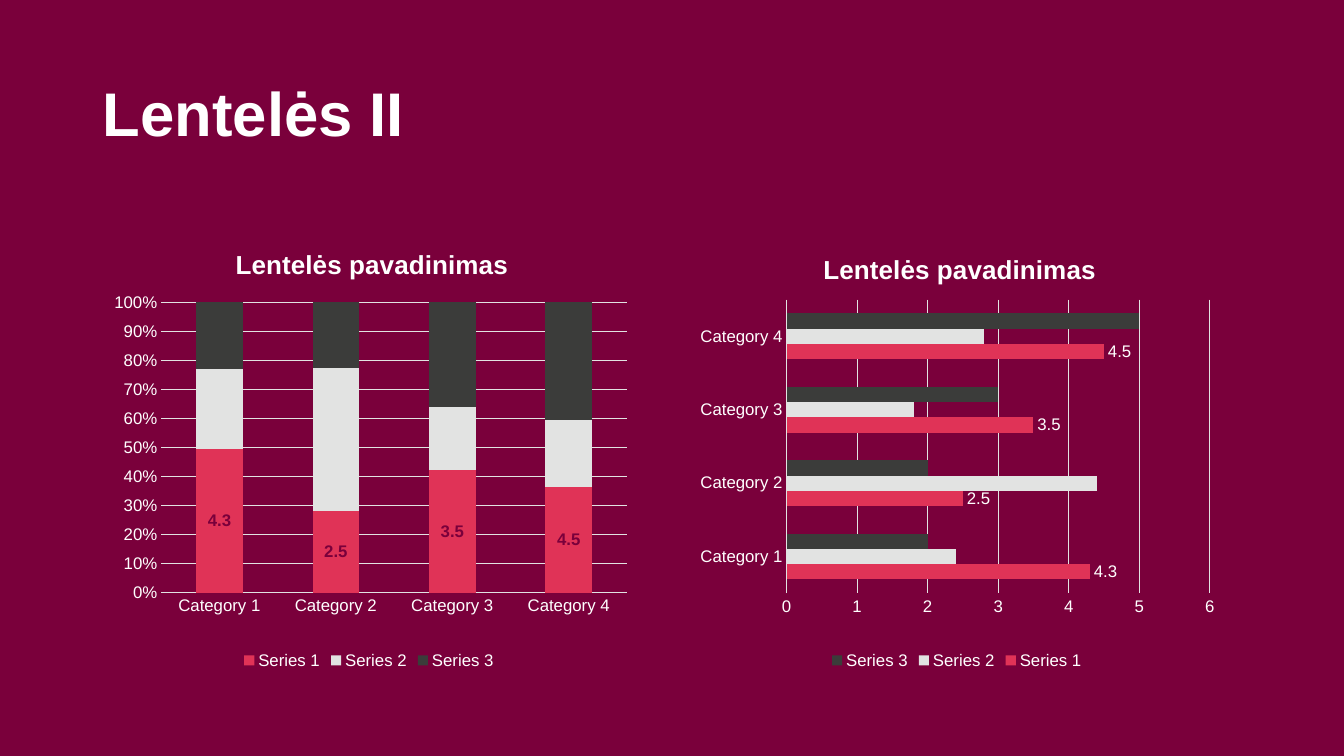
from lxml.etree import SubElement
from pptx import Presentation
from pptx.chart.data import CategoryChartData
from pptx.dml.color import RGBColor
from pptx.enum.chart import (XL_CHART_TYPE as ChartType, XL_LABEL_POSITION as LabelPos,
                             XL_LEGEND_POSITION as LegendPos, XL_TICK_MARK as TickMark)
from pptx.enum.text import MSO_ANCHOR, PP_ALIGN
from pptx.oxml.ns import qn
from pptx.util import Inches, Pt

BURGUNDY = RGBColor(0x7A, 0x00, 0x3B)
WHITE = RGBColor(0xFF, 0xFF, 0xFF)
RED = RGBColor(0xE0, 0x33, 0x57)
LIGHT = RGBColor(0xE2, 0xE3, 0xE2)
DARK = RGBColor(0x3B, 0x3C, 0x3A)
FONT = "Arial"

# Grid: two equal columns below the heading
LEFT, COLUMN_STEP, COLUMN_WIDTH = 0.92, 5.83, 5.48
HEADING_TOP, HEADING_WIDTH, HEADING_HEIGHT = 0.78, 9.77, 1.45
CHART_TOP, CHART_HEIGHT = HEADING_TOP + HEADING_HEIGHT, 4.45

CATEGORIES = [f"Category {n}" for n in range(1, 5)]
SERIES = [
    ("Series 1", (4.3, 2.5, 3.5, 4.5), RED),
    ("Series 2", (2.4, 4.4, 1.8, 2.8), LIGHT),
    ("Series 3", (2, 2, 3, 5), DARK),
]


def style_font(font, size, color=WHITE, bold=False):
    font.name, font.size, font.bold = FONT, Pt(size), bold
    font.color.rgb = color


def style_line(line):
    line.color.rgb = LIGHT
    line.width = Pt(0.75)


def set_layout(parent, index, **settings):
    """Give a chart part a fixed place, in shares of the chart's size."""
    for old in parent.findall(qn("c:layout")):
        parent.remove(old)
    layout = SubElement(parent, qn("c:layout"))
    parent.insert(index, layout)
    manual = SubElement(layout, qn("c:manualLayout"))
    for tag, value in settings.items():
        SubElement(manual, qn(f"c:{tag}")).set("val", str(value))


def add_heading(slide, text):
    heading = slide.shapes.title
    heading.left, heading.top = Inches(LEFT), Inches(HEADING_TOP)
    heading.width, heading.height = Inches(HEADING_WIDTH), Inches(HEADING_HEIGHT)
    frame = heading.text_frame
    frame.vertical_anchor = MSO_ANCHOR.TOP
    paragraph = frame.paragraphs[0]
    paragraph.alignment = PP_ALIGN.LEFT
    paragraph.line_spacing = 0.9
    run = paragraph.add_run()
    run.text = text
    style_font(run.font, 44, bold=True)


def style_axes(chart, top, step, number_format):
    for axis in (chart.category_axis, chart.value_axis):
        axis.major_tick_mark = axis.minor_tick_mark = TickMark.NONE
        style_font(axis.tick_labels.font, 12)
    style_line(chart.category_axis.format.line)
    values = chart.value_axis
    values.format.line.fill.background()
    values.has_major_gridlines = True
    style_line(values.major_gridlines.format.line)
    values.minimum_scale, values.maximum_scale, values.major_unit = 0, top, step
    values.tick_labels.number_format = number_format
    values.tick_labels.number_format_is_linked = False


def add_chart(slide, column, kind, caption, caption_top, plot_area, gap):
    data = CategoryChartData()
    data.categories = CATEGORIES
    for name, values, _ in SERIES:
        data.add_series(name, values)
    chart = slide.shapes.add_chart(
        kind, Inches(LEFT + column * COLUMN_STEP), Inches(CHART_TOP),
        Inches(COLUMN_WIDTH), Inches(CHART_HEIGHT), data).chart
    style_font(chart.font, 10)

    # Caption
    run = chart.chart_title.text_frame.paragraphs[0].add_run()
    run.text = caption
    style_font(run.font, 18.6, bold=True)
    chart.chart_title.include_in_layout = False
    set_layout(chart.element.find(".//" + qn("c:title")), 1,
               xMode="edge", yMode="edge", x=0.25, y=caption_top)

    # Legend
    chart.has_legend = True
    chart.legend.position = LegendPos.BOTTOM
    chart.legend.include_in_layout = False
    style_font(chart.legend.font, 12)

    # Bars
    x, y, w, h = plot_area
    set_layout(chart.element.find(".//" + qn("c:plotArea")), 0, layoutTarget="inner",
               xMode="edge", yMode="edge", x=x, y=y, w=w, h=h)
    bars = chart.plots[0]
    bars.gap_width = gap
    bars.vary_by_categories = False
    for series, (_, _, color) in zip(bars.series, SERIES):
        series.format.fill.solid()
        series.format.fill.fore_color.rgb = color
    return chart


def label_first_series(chart, position, color, bold):
    labels = chart.plots[0].series[0].data_labels
    labels.show_value = True
    labels.position = position
    style_font(labels.font, 12, color, bold)


def main():
    deck = Presentation()
    deck.slide_width, deck.slide_height = Inches(13.33), Inches(7.5)
    slide = deck.slides.add_slide(deck.slide_layouts[5])
    slide.background.fill.solid()
    slide.background.fill.fore_color.rgb = BURGUNDY
    add_heading(slide, "Lentelės II")

    # Shares of the total
    shares = add_chart(slide, 0, ChartType.COLUMN_STACKED_100, "Lentelės pavadinimas",
                       0.04, (0.124, 0.173, 0.843, 0.648), 150)
    style_axes(shares, 1, 0.1, "0%")
    label_first_series(shares, LabelPos.CENTER, BURGUNDY, True)

    # Values side by side
    amounts = add_chart(slide, 1, ChartType.BAR_CLUSTERED, "Lentelės pavadinimas",
                        0.05, (0.192, 0.167, 0.766, 0.655), 182)
    style_axes(amounts, 6, 1, "General")
    label_first_series(amounts, LabelPos.OUTSIDE_END, WHITE, False)

    deck.save("out.pptx")


if __name__ == "__main__":
    main()
